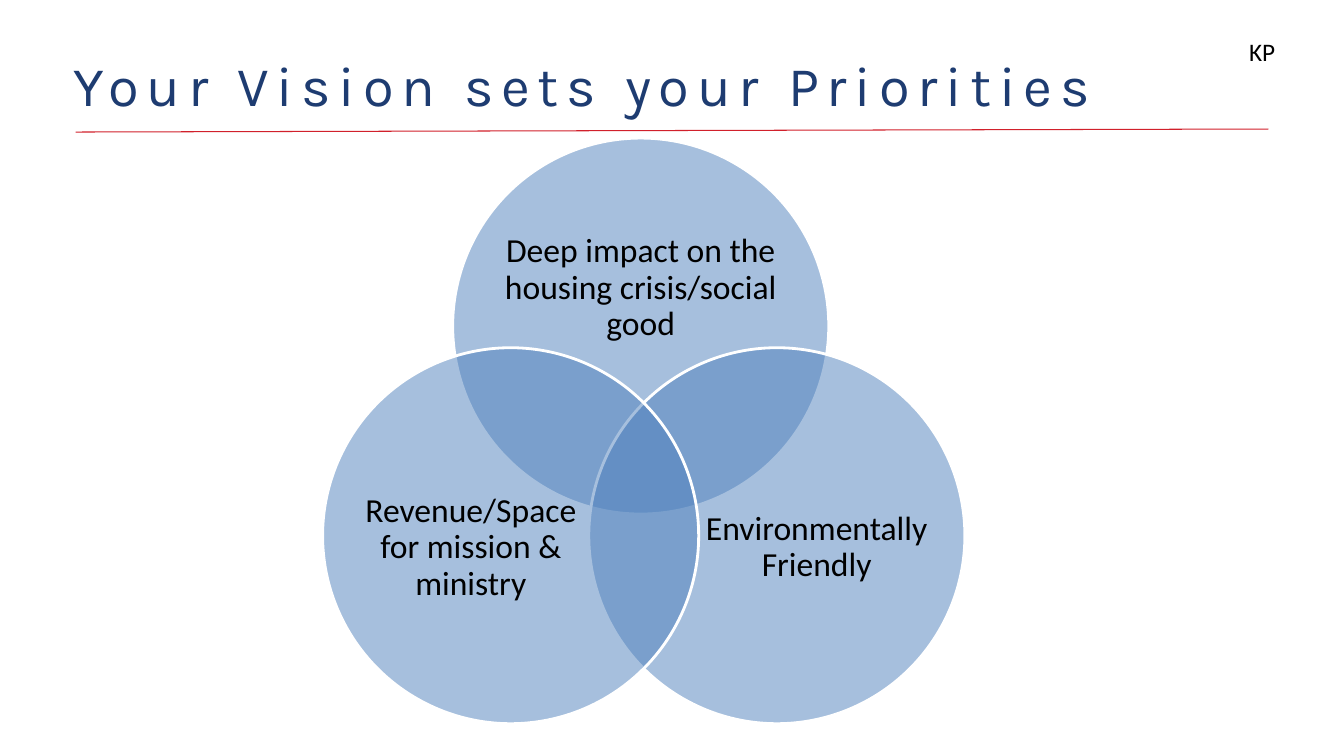
from dataclasses import dataclass

from lxml.etree import SubElement
from pptx import Presentation
from pptx.dml.color import RGBColor
from pptx.enum.shapes import MSO_CONNECTOR as Line, MSO_SHAPE as Shape
from pptx.enum.text import MSO_ANCHOR as Anchor, MSO_AUTO_SIZE as Fit, PP_ALIGN as Align
from pptx.oxml.ns import qn
from pptx.slide import Slide
from pptx.text.text import TextFrame
from pptx.util import Inches, Pt

SIZE = 3.73  # circle diameter


@dataclass
class Circle:
    left: float
    top: float
    text: str
    box: tuple[float, float, float, float]


CIRCLES = [
    Circle(4.49, 1.37, "Deep impact on the housing crisis/social good",
           (4.99, 2.02, 2.73, 1.68)),
    Circle(5.84, 3.45, "Environmentally Friendly", (6.98, 4.41, 2.24, 2.05)),
    Circle(3.2, 3.45, "Revenue/Space for mission & ministry",
           (3.55, 4.41, 2.24, 2.05)),
]


def color(code: str) -> RGBColor:
    return RGBColor.from_string(code)


def write(frame: TextFrame, text: str, size: int, face: str = "Calibri",
          ink: str = "000000", align: Align = Align.LEFT) -> None:
    frame.word_wrap = True
    para = frame.paragraphs[0]
    para.text = text
    para.alignment = align
    para.font.size = Pt(size)
    para.font.name = face
    para.font.color.rgb = color(ink)


def trim(frame: TextFrame) -> None:
    frame.margin_left = frame.margin_right = 0
    frame.margin_top = frame.margin_bottom = 0


def add_title(slide: Slide) -> None:
    title = slide.shapes.title
    title.left, title.top = Inches(0.73), Inches(0.69)
    title.width, title.height = Inches(11.83), Inches(0.52)
    frame = title.text_frame
    trim(frame)
    frame.vertical_anchor = Anchor.TOP
    frame.auto_size = Fit.SHAPE_TO_FIT_TEXT
    write(frame, "Your Vision sets your Priorities", 40, "Karla", "1E3C71")
    para = frame.paragraphs[0]
    para.line_spacing = Pt(34.7)
    # Letter spacing in hundredths of a point
    para.runs[0]._r.get_or_add_rPr().set("spc", "560")


def add_rule(slide: Slide) -> None:
    rule = slide.shapes.add_connector(
        Line.STRAIGHT, Inches(0.75), Inches(1.31), Inches(12.58), Inches(1.28))
    rule.line.color.rgb = color("D1202B")
    rule.line.width = Pt(0.75)
    SubElement(rule._element.spPr, qn("a:effectLst"))


def add_circle(slide: Slide, item: Circle) -> None:
    disc = slide.shapes.add_shape(
        Shape.OVAL, Inches(item.left), Inches(item.top), Inches(SIZE), Inches(SIZE))
    disc.shadow.inherit = False
    disc.fill.solid()
    disc.fill.fore_color.rgb = color("4F81BD")
    tint = disc._element.spPr.find(qn("a:solidFill"))[0]
    SubElement(tint, qn("a:alpha")).set("val", "50000")
    disc.line.color.rgb = color("FFFFFF")
    disc.line.width = Pt(2)

    frame = slide.shapes.add_textbox(*map(Inches, item.box)).text_frame
    trim(frame)
    frame.vertical_anchor = Anchor.MIDDLE
    write(frame, item.text, 24, align=Align.CENTER)
    frame.paragraphs[0].line_spacing = 0.9


def main() -> None:
    deck = Presentation()
    deck.slide_width, deck.slide_height = Inches(13.33), Inches(7.5)
    slide = deck.slides.add_slide(deck.slide_layouts[5])

    # Heading
    add_rule(slide)
    add_title(slide)

    # Venn diagram
    for item in CIRCLES:
        add_circle(slide, item)

    # Initials
    note = slide.shapes.add_textbox(
        Inches(12.29), Inches(0.31), Inches(0.79), Inches(0.4))
    note.text_frame.auto_size = Fit.SHAPE_TO_FIT_TEXT
    write(note.text_frame, "KP", 18)

    deck.save("out.pptx")


if __name__ == "__main__":
    main()
